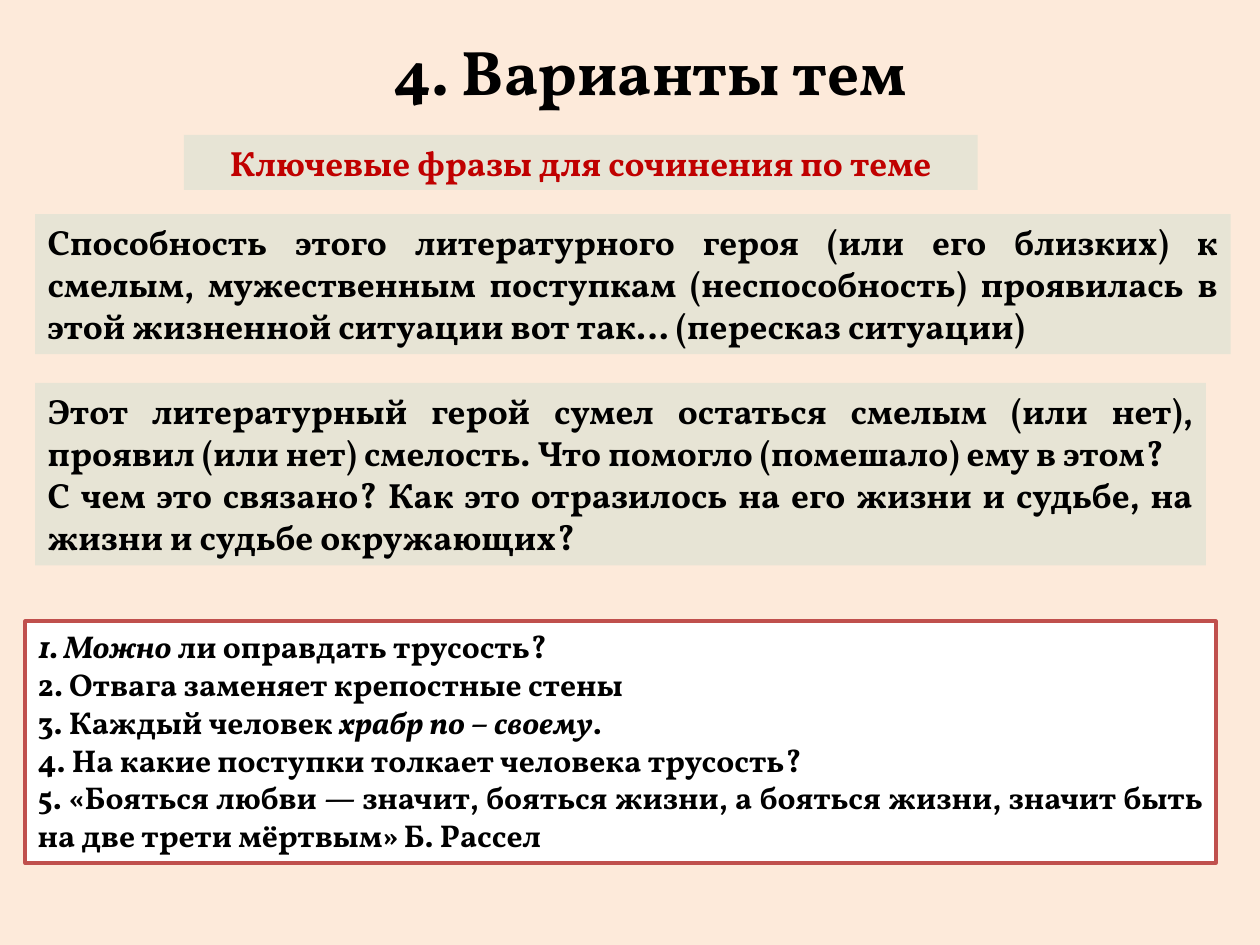
"""Builds the slide with key phrases and topic options for an essay on courage."""
from pptx import Presentation
from pptx.dml.color import RGBColor
from pptx.enum.shapes import MSO_SHAPE as Shape
from pptx.enum.text import MSO_ANCHOR as Anchor, MSO_AUTO_SIZE as AutoSize, PP_ALIGN as Align
from pptx.util import Cm, Pt

FONT = "Vollkorn"
COLORS = {
    "background": "FDEADA",
    "panel": "E7E4D5",
    "paper": "FFFFFF",
    "border": "C0504D",
    "accent": "C00000",
    "ink": "000000",
}

TITLE = ["4. Варианты тем"]
SUBTITLE = ["Ключевые фразы для сочинения по теме"]
ABILITY = [
    "Способность этого литературного героя (или его близких) к смелым, мужественным "
    "поступкам (неспособность) проявилась в этой жизненной ситуации вот так… "
    "(пересказ ситуации)",
]
OUTCOME = [
    "Этот литературный герой сумел остаться смелым (или нет), проявил (или нет) "
    "смелость. Что помогло (помешало) ему в этом?",
    "С чем это связано? Как это отразилось на его жизни и судьбе, на жизни и судьбе "
    "окружающих?",
]
TOPICS = [
    [("1. Можно", True), (" ли оправдать трусость?", False)],
    "2. Отвага заменяет крепостные стены",
    [("3. Каждый человек ", False), ("храбр по – своему", True), (".", False)],
    "4. На какие поступки толкает человека трусость?",
    "5. «Бояться любви — значит, бояться жизни, а бояться жизни, значит быть на две "
    "трети мёртвым» Б. Рассел",
]

BLOCKS = [
    (SUBTITLE, (3.71, 2.72, 16, 1.11),
     dict(fill="panel", color="accent", align=Align.CENTER)),
    (TITLE, (5.51, 0.53, 15.19, 1.8), dict(size=36, align=Align.CENTER)),
    (OUTCOME, (0.71, 7.72, 23.6, 3.68), dict(fill="panel")),
    (ABILITY, (0.71, 4.32, 24.1, 2.82), dict(fill="panel")),
    (TOPICS, (0.51, 12.52, 24, 4.88), dict(fill="paper", border="border", size=18)),
]


def rgb(name):
    """Looks up a named colour."""
    return RGBColor.from_string(COLORS[name])


def add_text(slide, paragraphs, box, *, fill=None, border=None, size=20,
             color="ink", align=Align.JUSTIFY):
    """Adds a text box, or a filled panel when a fill is named."""
    place = [Cm(length) for length in box]
    if fill:
        block = slide.shapes.add_shape(Shape.RECTANGLE, *place)
        block.shadow.inherit = False
        block.fill.solid()
        block.fill.fore_color.rgb = rgb(fill)
        if border:
            block.line.color.rgb = rgb(border)
            block.line.width = Pt(2)
        else:
            block.line.fill.background()
    else:
        block = slide.shapes.add_textbox(*place)

    frame = block.text_frame
    frame.word_wrap = True
    frame.auto_size = AutoSize.SHAPE_TO_FIT_TEXT
    frame.vertical_anchor = Anchor.TOP
    for index, content in enumerate(paragraphs):
        paragraph = frame.add_paragraph() if index else frame.paragraphs[0]
        paragraph.alignment = align
        pieces = [(content, False)] if isinstance(content, str) else content
        for words, italic in pieces:
            run = paragraph.add_run()
            run.text = words
            run.font.name = FONT
            run.font.size = Pt(size)
            run.font.bold = True
            run.font.italic = italic
            run.font.color.rgb = rgb(color)


def main():
    """Builds and saves the presentation."""
    deck = Presentation()
    deck.slide_width, deck.slide_height = Cm(25.4), Cm(19.05)
    slide = deck.slides.add_slide(deck.slide_layouts[6])
    slide.background.fill.solid()
    slide.background.fill.fore_color.rgb = rgb("background")
    for paragraphs, box, style in BLOCKS:
        add_text(slide, paragraphs, box, **style)
    deck.save("out.pptx")


if __name__ == "__main__":
    main()
